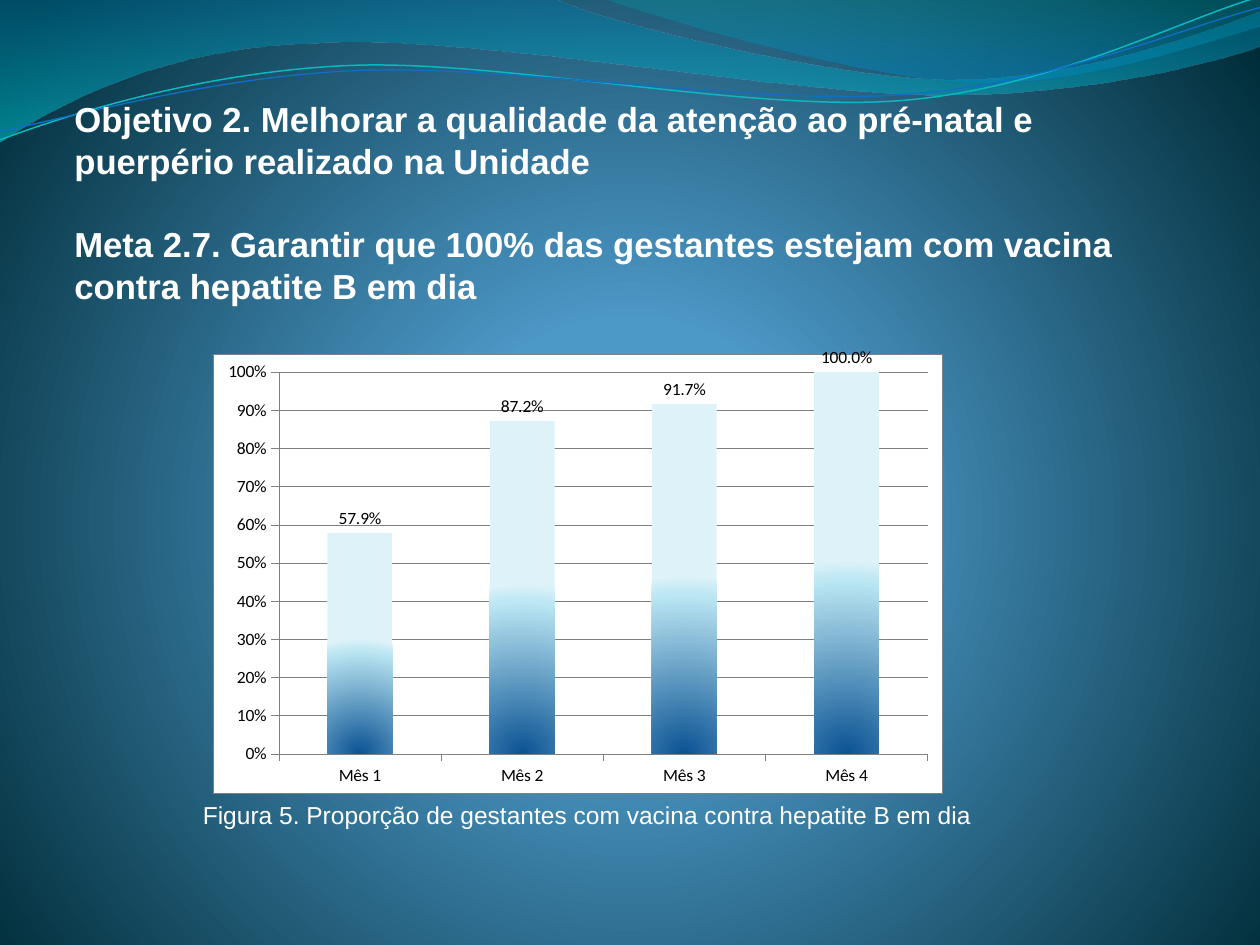
from dataclasses import dataclass
from math import cos, radians, sin

from lxml import etree
from pptx import Presentation
from pptx.chart.data import CategoryChartData
from pptx.dml.color import RGBColor
from pptx.enum.chart import XL_CHART_TYPE, XL_LABEL_POSITION, XL_TICK_MARK
from pptx.enum.text import MSO_ANCHOR, MSO_AUTO_SIZE, PP_ALIGN
from pptx.oxml import parse_xml
from pptx.oxml.ns import nsdecls, qn
from pptx.util import Inches, Pt

COLUMNS = XL_CHART_TYPE.COLUMN_CLUSTERED
OUTSIDE_END = XL_LABEL_POSITION.OUTSIDE_END
TICK_OUTSIDE = XL_TICK_MARK.OUTSIDE
CURVE_ROTATION = -2.7
CURVE_CENTRE = (4.99, 0.58)


@dataclass(frozen=True)
class Theme:
    text: str = "FFFFFF"
    chart_text: str = "000000"
    chart_fill: str = "FFFFFF"
    chart_line: str = "808080"
    teal_line: str = "0AB8BF"
    blue_line: str = "0F6FC6"
    # Gradient stops: position %, colour, opacity %
    background: tuple = ((0, "4AA0D6", 100), (25, "4C98C7", 100), (100, "002C38", 100))
    wide_wave: tuple = ((0, "0074A1", 45), (100, "00C6CF", 55))
    right_wave: tuple = ((0, "00A1A9", 30), (80, "008BBF", 45))
    bars: tuple = ((0, "0B5394", 100), (90, "BCE7F3", 100), (100, "DEF2F9", 100))
    font: str = "Arial"
    chart_font: str = "Calibri"
    title_size: float = 19.8
    title_leading: float = 23.75
    caption_size: float = 14
    chart_size: float = 10


THEME = Theme()

# Each outline: start point, then straight (2 numbers) or cubic (6 numbers) segments
WIDE_WAVE = [(0, 0), (4.4, -0.01), (4.76, 0.17, 6.64, 0.63, 7.58, 0.63),
             (8.53, 0.63, 9.58, 0.26, 10, 0.09), (10.01, 0.36),
             (9.83, 0.44, 8.7, 0.76, 7.46, 0.75), (6.22, 0.75, 3.82, 0.28, 2.57, 0.34),
             (1.29, 0.36, 0.46, 0.83, -0.01, 1.13), (0, 0)]
RIGHT_WAVE = [(4.79, -0.01), (5.09, 0.11, 6.82, 0.62, 7.69, 0.65),
              (8.56, 0.69, 9.61, 0.32, 10, 0.21), (10, 0), (4.79, -0.01)]
TEAL_CURVE = [(0, 1.11), (0.48, 0.93, 1.58, 0.57, 2.77, 0.52),
              (3.95, 0.47, 5.93, 0.89, 7.13, 0.8), (8.33, 0.71, 9.38, 0.15, 9.98, -0.02)]
BLUE_CURVE = [(0, 1.04), (0.47, 0.96, 1.64, 0.61, 2.83, 0.56),
              (4.03, 0.51, 5.97, 0.84, 7.17, 0.75), (8.36, 0.67, 9.41, 0.21, 10, 0.06)]

TITLE = ["Objetivo 2. Melhorar a qualidade da atenção ao pré-natal e puerpério realizado na Unidade",
         "Meta 2.7. Garantir que 100% das gestantes estejam com vacina contra hepatite B em dia"]
CAPTION = "Figura 5. Proporção de gestantes com vacina contra hepatite B em dia"
MONTHS = ["Mês 1", "Mês 2", "Mês 3", "Mês 4"]
PROPORTIONS = [0.579, 0.872, 0.917, 1]


def rgb(color):
    return RGBColor.from_string(color)


def set_gradient(fill, element, stops, focus=None):
    """Give a fill its stops: circular around focus, otherwise top to bottom."""
    fill.gradient()
    gradient = next(element.iter(qn("a:gradFill")))
    for child in list(gradient):
        gradient.remove(child)
    stop_list = etree.SubElement(gradient, qn("a:gsLst"))
    for position, color, opacity in stops:
        stop = etree.SubElement(stop_list, qn("a:gs"), pos=str(position * 1000))
        color_element = etree.SubElement(stop, qn("a:srgbClr"), val=color)
        if opacity < 100:
            etree.SubElement(color_element, qn("a:alpha"), val=str(opacity * 1000))
    if focus:
        circle = etree.SubElement(gradient, qn("a:path"), path="circle")
        sides = {side: str(value * 1000) for side, value in zip("ltrb", focus)}
        etree.SubElement(circle, qn("a:fillToRect"), **sides)
    else:
        etree.SubElement(gradient, qn("a:lin"), ang="5400000", scaled="0")


def pairs(segment):
    return list(zip(segment[::2], segment[1::2]))


def turn(segment, degrees):
    """Rotate the points of a segment around the centre of the curves."""
    cosine, sine = cos(radians(degrees)), sin(radians(degrees))
    centre_x, centre_y = CURVE_CENTRE
    turned = []
    for x, y in pairs(segment):
        dx, dy = x - centre_x, y - centre_y
        turned += [centre_x + dx * cosine - dy * sine, centre_y + dx * sine + dy * cosine]
    return turned


def add_outline(slide, outline, close):
    """Build a freeform through the end points, then bend its cubic segments."""
    outline = [[Inches(value) for value in segment] for segment in outline]
    builder = slide.shapes.build_freeform(*outline[0])
    builder.add_line_segments([segment[-2:] for segment in outline[1:]], close=close)
    shape = builder.convert_to_shape()
    shape.shadow.inherit = False
    lines = list(shape.element.iter(qn("a:lnTo")))
    for line, segment in zip(lines, outline[1:]):
        if len(segment) == 6:
            cubic = etree.Element(qn("a:cubicBezTo"))
            for x, y in pairs(segment):
                etree.SubElement(cubic, qn("a:pt"), x=str(x - shape.left), y=str(y - shape.top))
            line.getparent().replace(line, cubic)
    return shape


def add_wave(slide, outline, stops):
    shape = add_outline(slide, outline, True)
    set_gradient(shape.fill, shape.element, stops)
    shape.line.fill.background()


def add_curve(slide, outline, color, width):
    level = [turn(segment, -CURVE_ROTATION) for segment in outline]
    shape = add_outline(slide, level, False)
    shape.rotation = CURVE_ROTATION
    shape.fill.background()
    shape.line.color.rgb = rgb(color)
    shape.line.width = Pt(width)


def style_font(font, name, size, color, bold=False):
    font.name, font.size, font.bold = name, Pt(size), bold
    font.color.rgb = rgb(color)


def set_text(shape, lines, size, top_inset, bold=False):
    frame = shape.text_frame
    frame.word_wrap = True
    frame.auto_size = MSO_AUTO_SIZE.NONE
    frame.vertical_anchor = MSO_ANCHOR.TOP
    frame.margin_left = frame.margin_bottom = 0
    frame.margin_right = Inches(0.02)
    frame.margin_top = Inches(top_inset)
    frame.text = "\n".join(lines)
    for paragraph in frame.paragraphs:
        paragraph.alignment = PP_ALIGN.LEFT
        style_font(paragraph.font, THEME.font, size, THEME.text, bold)
    return frame.paragraphs


def add_title(slide):
    title = slide.shapes.title
    slide.shapes.element.append(title.element)  # in front of the waves
    title.left, title.top = Inches(0.59), Inches(0.68)
    title.width, title.height = Inches(8.59), Inches(3.14)
    paragraphs = set_text(title, TITLE, THEME.title_size, 0.1, bold=True)
    for paragraph in paragraphs:
        paragraph.line_spacing = Pt(THEME.title_leading)
        paragraph.space_before = Pt(0)
    paragraphs[1].space_before = Pt(THEME.title_leading)


def add_caption(slide):
    caption = slide.shapes.add_textbox(Inches(1.61), Inches(6.3), Inches(8.59), Inches(0.94))
    paragraph = set_text(caption, [CAPTION], THEME.caption_size, 0.05)[0]
    paragraph.space_before = Pt(2.8)


def chart_area_format(line):
    return parse_xml(f'<c:spPr {nsdecls("c", "a")}><a:solidFill><a:srgbClr val="{THEME.chart_fill}"/>'
                     f'</a:solidFill>{line}</c:spPr>')


def format_chart_areas(chart):
    """White chart and plot areas, thin border, fixed inner plot position."""
    chart_element = chart.element.find(qn("c:chart"))
    border = (f'<a:ln w="3175"><a:solidFill><a:srgbClr val="{THEME.chart_line}"/>'
              '</a:solidFill></a:ln>')
    chart_element.addnext(chart_area_format(border))
    plot_area = chart_element.find(qn("c:plotArea"))
    plot_area.append(chart_area_format("<a:ln><a:noFill/></a:ln>"))
    for layout in plot_area.findall(qn("c:layout")):
        plot_area.remove(layout)
    plot_area.insert(0, parse_xml(
        f'<c:layout {nsdecls("c")}><c:manualLayout><c:layoutTarget val="inner"/>'
        '<c:xMode val="edge"/><c:yMode val="edge"/><c:x val="0.09"/><c:y val="0.04"/>'
        '<c:w val="0.89"/><c:h val="0.87"/></c:manualLayout></c:layout>'))


def add_chart(slide):
    data = CategoryChartData()
    data.categories = MONTHS
    data.add_series("Series 1", PROPORTIONS)
    chart = slide.shapes.add_chart(COLUMNS, Inches(1.69), Inches(2.76),
                                   Inches(5.79), Inches(3.54), data).chart
    chart.has_legend = chart.has_title = False
    style_font(chart.font, THEME.chart_font, THEME.chart_size, THEME.chart_text)

    # Axes and gridlines
    value_axis, category_axis = chart.value_axis, chart.category_axis
    value_axis.minimum_scale, value_axis.maximum_scale, value_axis.major_unit = 0, 1, 0.1
    value_axis.tick_labels.number_format = "0%"
    value_axis.tick_labels.number_format_is_linked = False
    value_axis.has_major_gridlines = True
    for axis in (value_axis, category_axis):
        axis.major_tick_mark = TICK_OUTSIDE
    for item in (value_axis, category_axis, value_axis.major_gridlines):
        item.format.line.color.rgb = rgb(THEME.chart_line)
        item.format.line.width = Pt(0.25)

    # Bars and their labels
    plot = chart.plots[0]
    plot.gap_width = 150
    plot.vary_by_categories = False
    set_gradient(plot.series[0].format.fill, chart.element, THEME.bars, focus=(50, 100, 50, 0))
    plot.has_data_labels = True
    labels = plot.data_labels
    labels.show_value = True
    labels.number_format, labels.number_format_is_linked = "0.0%", False
    labels.position = OUTSIDE_END
    format_chart_areas(chart)


def main():
    presentation = Presentation()
    presentation.slide_width, presentation.slide_height = Inches(10), Inches(7.5)
    slide = presentation.slides.add_slide(presentation.slide_layouts[5])
    set_gradient(slide.background.fill, slide.element, THEME.background, focus=(10, 110, 10, 100))
    # Waves along the top
    add_wave(slide, WIDE_WAVE, THEME.wide_wave)
    add_wave(slide, RIGHT_WAVE, THEME.right_wave)
    add_curve(slide, TEAL_CURVE, THEME.teal_line, 0.85)
    add_curve(slide, BLUE_CURVE, THEME.blue_line, 0.75)
    # Content
    add_title(slide)
    add_caption(slide)
    add_chart(slide)
    presentation.save("out.pptx")


if __name__ == "__main__":
    main()
